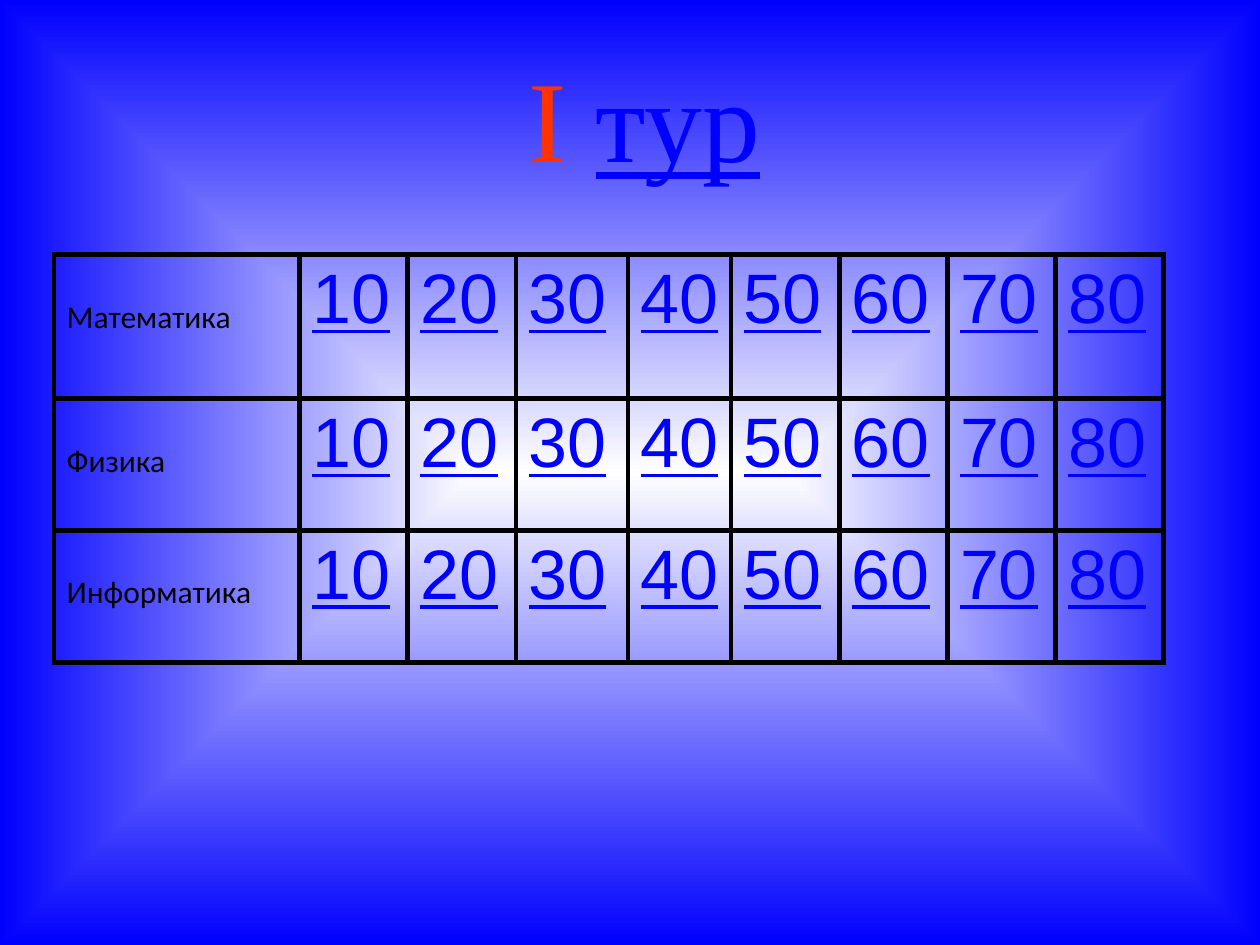
"""Build the quiz board slide for the first round."""
from pptx import Presentation
from pptx.dml.color import RGBColor
from pptx.enum.text import MSO_ANCHOR, MSO_AUTO_SIZE, PP_ALIGN
from pptx.oxml import parse_xml
from pptx.oxml.ns import nsdecls
from pptx.util import Cm, Pt

BLACK = RGBColor(0x00, 0x00, 0x00)
BLUE = RGBColor(0x00, 0x00, 0xFF)
RED = RGBColor(0xFF, 0x33, 0x00)
WHITE = RGBColor(0xFF, 0xFF, 0xFF)

TITLE = [
    (" I ", dict(name="Times New Roman", size=Pt(66)), RED),
    ("тур", dict(name="Times New Roman", size=Pt(66), underline=True), BLUE),
]
SUBJECTS = ["Математика", "Физика", "Информатика"]
POINTS = range(10, 90, 10)
SUBJECT_FONT = dict(name="Calibri", size=Pt(18))
POINTS_FONT = dict(name="Arial", size=Pt(40), underline=True)
COL_WIDTHS = [4.95, 2.18, 2.18, 2.26, 2.08, 2.18, 2.18, 2.18, 2.18]
ROW_HEIGHTS = [2.9, 2.66, 2.66]
SUBJECT_TOP = Cm(0.88)
BORDER = Pt(3)


def add_run(p, text, font, color):
    r = p.add_run()
    r.text = text
    for key, value in font.items():
        setattr(r.font, key, value)
    r.font.color.rgb = color


def set_background(s):
    s._element.cSld.insert(0, parse_xml(
        f'<p:bg {nsdecls("p", "a")}><p:bgPr><a:gradFill rotWithShape="0"><a:gsLst>'
        f'<a:gs pos="0"><a:srgbClr val="{WHITE}"/></a:gs>'
        f'<a:gs pos="100000"><a:srgbClr val="{BLUE}"/></a:gs></a:gsLst>'
        '<a:path path="shape"><a:fillToRect l="50000" t="50000" r="50000" b="50000"/>'
        '</a:path></a:gradFill><a:effectLst/></p:bgPr></p:bg>'))


def format_cell(cell):
    tc_pr = cell._tc.get_or_add_tcPr()
    for side in "LRTB":
        tc_pr.append(parse_xml(
            f'<a:ln{side} {nsdecls("a")} w="{BORDER}"><a:solidFill>'
            f'<a:srgbClr val="{BLACK}"/></a:solidFill></a:ln{side}>'))
    cell.fill.background()


def add_title(s):
    sp = s.shapes.title
    sp.left, sp.top, sp.width, sp.height = Cm(1.27), Cm(0.76), Cm(22.86), Cm(3.18)
    tf = sp.text_frame
    tf.auto_size = MSO_AUTO_SIZE.NONE
    tf.vertical_anchor = MSO_ANCHOR.MIDDLE
    p = tf.paragraphs[0]
    p.alignment = PP_ALIGN.CENTER
    for text, font, color in TITLE:
        add_run(p, text, font, color)


def add_board(s):
    frame = s.shapes.add_table(
        len(SUBJECTS), len(COL_WIDTHS), Cm(1.09), Cm(5.13),
        Cm(sum(COL_WIDTHS)), Cm(sum(ROW_HEIGHTS)))
    table = frame.table
    table.first_row = table.horz_banding = False
    for col, width in zip(table.columns, COL_WIDTHS):
        col.width = Cm(width)
    for row, height, subject in zip(table.rows, ROW_HEIGHTS, SUBJECTS):
        row.height = Cm(height)
        for cell, value in zip(row.cells, [subject, *POINTS]):
            format_cell(cell)
            p = cell.text_frame.paragraphs[0]
            if value == subject:
                cell.margin_top = SUBJECT_TOP
                add_run(p, subject, SUBJECT_FONT, BLACK)
            else:
                add_run(p, str(value), POINTS_FONT, BLUE)


def main():
    prs = Presentation()
    prs.slide_width, prs.slide_height = Cm(25.4), Cm(19.05)
    s = prs.slides.add_slide(prs.slide_layouts[5])
    set_background(s)
    add_title(s)
    add_board(s)
    prs.save("out.pptx")


if __name__ == "__main__":
    main()
